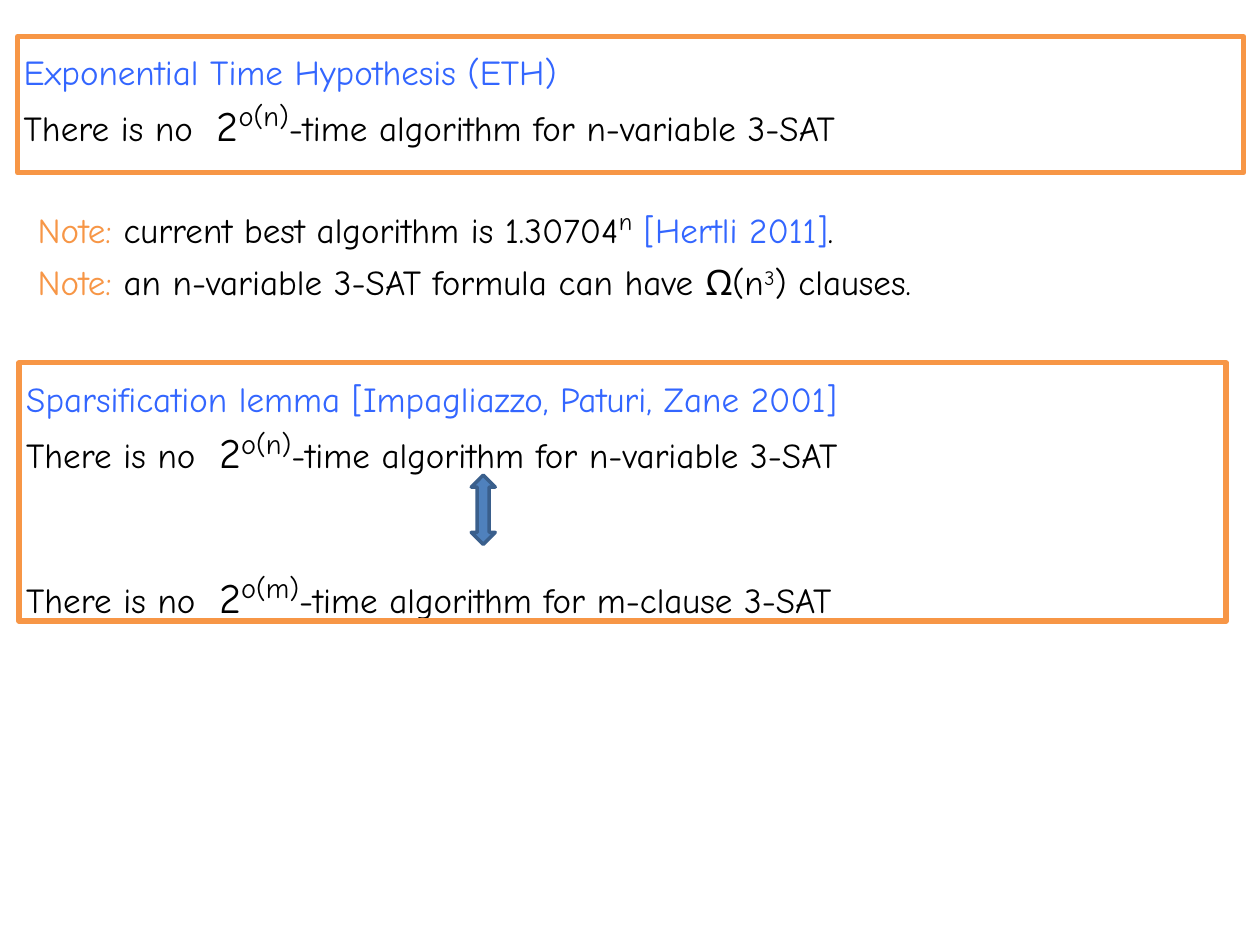
from dataclasses import dataclass

import pptx
import pptx.dml.color
import pptx.enum.shapes
import pptx.enum.text
import pptx.util

Inches, Pt = pptx.util.Inches, pptx.util.Pt
RGBColor = pptx.dml.color.RGBColor
MSO_SHAPE = pptx.enum.shapes.MSO_SHAPE

BLACK = RGBColor(0x00, 0x00, 0x00)
BLUE = RGBColor(0x33, 0x66, 0xFF)
ORANGE = RGBColor(0xF7, 0x96, 0x46)
ARROW_FILL = RGBColor(0x4F, 0x81, 0xBD)
ARROW_LINE = RGBColor(0x3A, 0x5F, 0x8C)
FONT = "Comic Neue"


@dataclass
class Run:
    text: str
    color: RGBColor = BLACK
    size: int = 20
    raised: bool = False


@dataclass
class Para:
    runs: list[Run]
    before: float = 0


@dataclass
class Box:
    left: float
    top: float
    width: float
    height: float


def add_run(p, text: str, *, color: RGBColor, size: int, raised: bool) -> None:
    r = p.add_run()
    r.text = text
    r.font.name, r.font.size = FONT, Pt(size)
    r.font.color.rgb = color
    if raised:
        r.font._element.set("baseline", "30000")


def add_text(s, box: Box, paras: list[Para]) -> None:
    sp = s.shapes.add_textbox(*map(Inches, (box.left, box.top, box.width, box.height)))
    tf = sp.text_frame
    tf.word_wrap = True
    tf.auto_size = pptx.enum.text.MSO_AUTO_SIZE.SHAPE_TO_FIT_TEXT
    for i, para in enumerate(paras):
        p = tf.add_paragraph() if i else tf.paragraphs[0]
        p.space_before = Pt(para.before)
        for run in para.runs:
            add_run(p, run.text, color=run.color, size=run.size, raised=run.raised)


def add_shape(s, kind, box: Box, line: RGBColor, width: float, fill: RGBColor | None = None):
    sp = s.shapes.add_shape(kind, *map(Inches, (box.left, box.top, box.width, box.height)))
    sp.shadow.inherit = False
    if fill is None:
        sp.fill.background()
    else:
        sp.fill.solid()
        sp.fill.fore_color.rgb = fill
    sp.line.color.rgb = line
    sp.line.width = Pt(width)
    return sp


def bound(letter: str, kind: str, before: float = 0) -> Para:
    """Statement that 3-SAT has no subexponential algorithm in the given parameter."""
    return Para([
        Run("There is no  "),
        Run("2", size=24),
        Run(f"o({letter})", size=28, raised=True),
        Run(f"-time algorithm for {letter}-{kind} 3-SAT"),
    ], before)


def heading(text: str) -> Para:
    return Para([Run(text, BLUE)])


def note(*runs: Run) -> list[Para]:
    return [Para([Run("Note: ", ORANGE), *runs])]


def main() -> None:
    prs = pptx.Presentation()
    prs.slide_width, prs.slide_height = Inches(10), Inches(7.5)
    s = prs.slides.add_slide(prs.slide_layouts[6])

    # Hypothesis
    add_text(s, Box(0.09, 0.35, 9.93, 0.84),
             [heading("Exponential Time Hypothesis (ETH)"), bound("n", "variable")])
    add_shape(s, MSO_SHAPE.RECTANGLE, Box(0.14, 0.29, 9.73, 1.08), ORANGE, 3)

    # Notes
    notes = [
        note(Run("current best algorithm is 1.30704"), Run("n", size=24, raised=True),
             Run(" "), Run("[Hertli 2011]", BLUE), Run(".")),
        note(Run("an n-variable 3-SAT formula can have Ω(n"), Run("3", raised=True),
             Run(") clauses.")),
    ]
    for i, paras in enumerate(notes):
        add_text(s, Box(0.2, 1.55 + 0.47 * i, 8.7, 0.44), paras)

    # Lemma: two equivalent statements joined by an arrow
    add_text(s, Box(0.11, 2.95, 9.93, 1.92), [
        heading("Sparsification lemma [Impagliazzo, Paturi, Zane 2001]"),
        bound("n", "variable"),
        bound("m", "clause", before=49),
    ])
    add_shape(s, MSO_SHAPE.RECTANGLE, Box(0.15, 2.88, 9.58, 2.05), ORANGE, 3)
    arrow = add_shape(s, MSO_SHAPE.LEFT_RIGHT_ARROW, Box(3.56, 3.95, 0.55, 0.19),
                      ARROW_LINE, 2, ARROW_FILL)
    arrow.rotation = 270

    prs.save("out.pptx")


if __name__ == "__main__":
    main()
